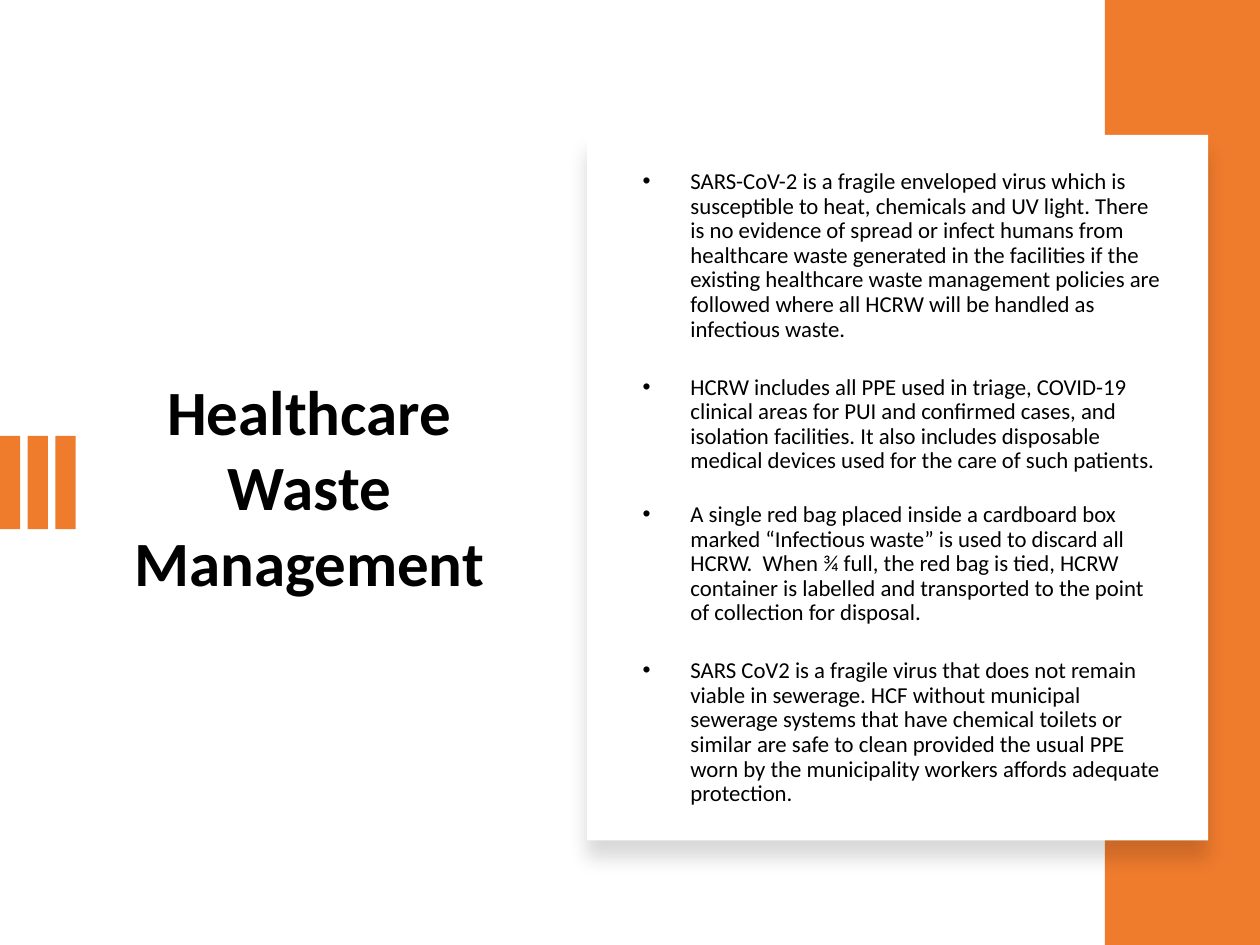
from lxml import etree
from pptx import Presentation, util as u
from pptx.dml.color import RGBColor
from pptx.enum import shapes, text
from pptx.oxml import ns

ORANGE = RGBColor(0xEF, 0x7B, 0x2D)
WHITE = RGBColor(0xFF, 0xFF, 0xFF)
BLACK = RGBColor(0, 0, 0)
FONT = "Calibri"
TITLE = "Healthcare Waste Management"
POINTS = [
    ("SARS-CoV-2 is a fragile enveloped virus which is susceptible to heat, chemicals and UV light. "
     "There is no evidence of spread or infect humans from healthcare waste generated in the facilities "
     "if the existing healthcare waste management policies are followed where all HCRW will be handled "
     "as infectious waste.", 2.6),
    ("HCRW includes all PPE used in triage, COVID-19 clinical areas for PUI and confirmed cases, and "
     "isolation facilities. It also includes disposable medical devices used for the care of such "
     "patients.", 19),
    ("A single red bag placed inside a cardboard box marked “Infectious waste” is used to discard all "
     "HCRW.  When ¾ full, the red bag is tied, HCRW container is labelled and transported to the point "
     "of collection for disposal.", 16.6),
    ("SARS CoV2 is a fragile virus that does not remain viable in sewerage. HCF without municipal "
     "sewerage systems that have chemical toilets or similar are safe to clean provided the usual PPE "
     "worn by the municipality workers affords adequate protection.", 19),
]


def place(box, left, top, width, height):
    box.left, box.top = u.Inches(left), u.Inches(top)
    box.width, box.height = u.Inches(width), u.Inches(height)


def add_block(page, color, *area):
    block = page.shapes.add_shape(shapes.MSO_SHAPE.RECTANGLE, *map(u.Inches, area))
    block.shadow.inherit = False
    block.fill.solid()
    block.fill.fore_color.rgb = color
    block.line.fill.background()
    return block


def add_soft_shadow(block):
    effects = block._element.spPr.find(ns.qn("a:effectLst"))
    shadow = etree.SubElement(effects, ns.qn("a:outerShdw"), blurRad=str(u.Pt(11)),
                              dist=str(u.Pt(10)), dir="5400000", algn="t", rotWithShape="0")
    color = etree.SubElement(shadow, ns.qn("a:srgbClr"), val=str(BLACK))
    etree.SubElement(color, ns.qn("a:alpha"), val="15000")


def style_text(para, size, bold=False):
    for span in para.runs:
        span.font.name = FONT
        span.font.size = u.Pt(size)
        span.font.bold = bold
        span.font.color.rgb = BLACK


def prepare_frame(box):
    frame = box.text_frame
    frame.word_wrap = True
    frame.auto_size = text.MSO_AUTO_SIZE.NONE
    frame.vertical_anchor = text.MSO_ANCHOR.MIDDLE
    return frame


def set_bullet(para, indent):
    props = para._p.get_or_add_pPr()
    props.set("marL", str(u.Inches(indent)))
    props.set("indent", str(-u.Inches(indent)))
    etree.SubElement(props, ns.qn("a:buFont"), typeface="Arial")
    etree.SubElement(props, ns.qn("a:buChar"), char="•")


def fill_title(box):
    place(box, 0.86, 1.46, 3.19, 4.79)
    frame = prepare_frame(box)
    frame.text = TITLE
    para = frame.paragraphs[0]
    para.alignment = text.PP_ALIGN.CENTER
    style_text(para, 36, bold=True)


def fill_list(box):
    place(box, 5, 1.19, 4.32, 5.37)
    frame = prepare_frame(box)
    frame.text = "\n".join(wording for wording, gap in POINTS)
    for para, (wording, gap) in zip(frame.paragraphs, POINTS):
        para.line_spacing = 0.9
        para.space_before = u.Pt(gap)
        para.space_after = u.Pt(0)
        set_bullet(para, 0.38)
        style_text(para, 13)


def main():
    deck = Presentation()
    deck.slide_width, deck.slide_height = u.Inches(10), u.Inches(7.5)
    page = deck.slides.add_slide(deck.slide_layouts[1])
    title, body = page.placeholders
    fill_title(title)
    for column in range(3):
        add_block(page, ORANGE, column * 0.22, 3.46, 0.16, 0.74)
    add_block(page, ORANGE, 8.77, 0, 1.23, 7.5)
    card = add_block(page, WHITE, 4.66, 1.07, 4.93, 5.6)
    add_soft_shadow(card)
    fill_list(body)
    card._element.addnext(body._element)
    deck.save("out.pptx")


if __name__ == "__main__":
    main()
